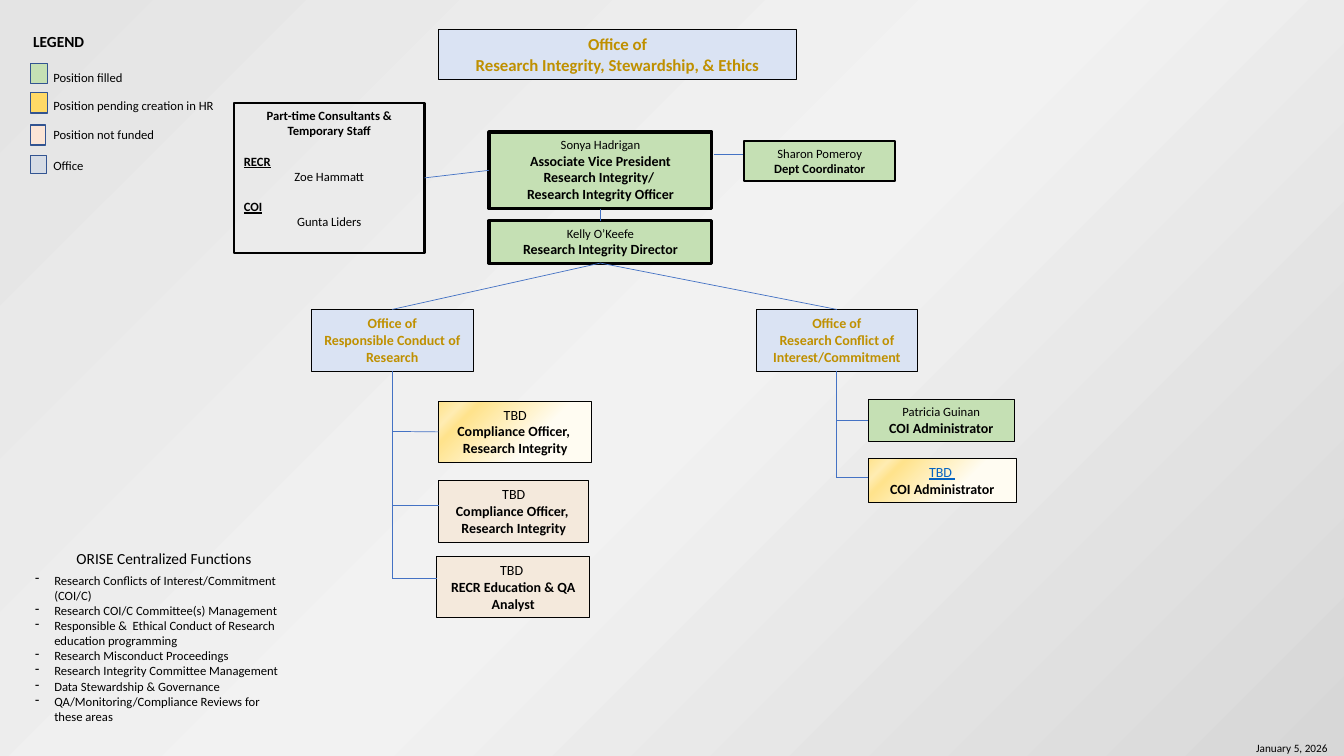
from pptx import Presentation
from pptx.dml.color import RGBColor
from pptx.enum.shapes import MSO_CONNECTOR as Connector, MSO_SHAPE as Shape
from pptx.enum.text import MSO_ANCHOR as Anchor, PP_ALIGN as Align
from pptx.oxml import parse_xml
from pptx.oxml.ns import nsdecls, qn
from pptx.util import Inches, Pt

BLACK = RGBColor(0x00, 0x00, 0x00)
GOLD = RGBColor(0xBF, 0x90, 0x00)
LINK_BLUE = RGBColor(0x05, 0x63, 0xC1)
LINE_BLUE = RGBColor(0x44, 0x72, 0xC4)
SWATCH_EDGE = RGBColor(0x32, 0x54, 0x91)
FILLED = RGBColor(0xC5, 0xE0, 0xB4)
PENDING = RGBColor(0xFF, 0xD9, 0x66)
NOT_FUNDED = RGBColor(0xFB, 0xE5, 0xD6)
OFFICE_KEY = RGBColor(0xD6, 0xDC, 0xE5)
OFFICE = RGBColor(0xDA, 0xE3, 0xF3)
UNFUNDED_POST = RGBColor(0xF4, 0xE9, 0xDC)
PENDING_STOPS = [(37, RGBColor(0xFF, 0xFC, 0xF2)), (80, RGBColor(0xFF, 0xE3, 0x8C)),
                 (88, RGBColor(0xFF, 0xEC, 0xB2)), (100, RGBColor(0xFF, 0xE3, 0x8C))]
BACKGROUND_STOPS = [(0, RGBColor(0xE4, 0xE4, 0xE4)), (51, RGBColor(0xF2, 0xF2, 0xF2)),
                    (100, RGBColor(0xD7, 0xD7, 0xD7))]
RADIAL = '<a:path {} path="circle"><a:fillToRect l="100000" t="100000"/></a:path>'
DIAGONAL = '<a:lin {} ang="2700000" scaled="0"/>'
FUNCTIONS = [
    "Research Conflicts of Interest/Commitment (COI/C)",
    "Research COI/C Committee(s) Management",
    "Responsible &  Ethical Conduct of Research education programming",
    "Research Misconduct Proceedings",
    "Research Integrity Committee Management",
    "Data Stewardship & Governance",
    "QA/Monitoring/Compliance Reviews for these areas",
]


def paint_gradient(fill, owner, stops, direction):
    """Fill the owner element with the given colour stops and direction."""
    fill.gradient()
    gradient = owner.find(".//" + qn("a:gradFill"))
    for child in list(gradient):
        gradient.remove(child)
    stop_xml = "".join(f'<a:gs pos="{position * 1000}"><a:srgbClr val="{color}"/></a:gs>'
                       for position, color in stops)
    gradient.append(parse_xml(f'<a:gsLst {nsdecls("a")}>{stop_xml}</a:gsLst>'))
    gradient.append(parse_xml(direction.format(nsdecls("a"))))


def format_paragraph(paragraph, text, size=9, bold=False, color=BLACK, underline=False):
    """Write one paragraph in the slide's font."""
    paragraph.text = text
    for run in paragraph.runs:
        run.font.name = "Calibri"
        run.font.size = Pt(size)
        run.font.bold = bold
        run.font.underline = underline
        run.font.color.rgb = color


def write_lines(shape, lines, alignment):
    """Write (text, format) lines into a shape and return its paragraphs."""
    frame = shape.text_frame
    frame.word_wrap = True
    frame.vertical_anchor = Anchor.TOP
    frame.text = "\n".join(text for text, _ in lines)
    for paragraph, (text, style) in zip(frame.paragraphs, lines):
        paragraph.alignment = alignment
        format_paragraph(paragraph, text, **style)
    return frame.paragraphs


def add_label(slide, box, text, **style):
    """Add a single-line text box."""
    label = slide.shapes.add_textbox(*map(Inches, box))
    write_lines(label, [(text, style)], Align.LEFT)


def add_rectangle(slide, box, fill, edge, width):
    """Add a rectangle with a plain, gradient or empty fill."""
    rectangle = slide.shapes.add_shape(Shape.RECTANGLE, *map(Inches, box))
    rectangle.shadow.inherit = False
    rectangle.line.color.rgb = edge
    rectangle.line.width = Pt(width)
    if fill is None:
        rectangle.fill.background()
    elif fill is PENDING_STOPS:
        paint_gradient(rectangle.fill, rectangle._element, fill, RADIAL)
    else:
        rectangle.fill.solid()
        rectangle.fill.fore_color.rgb = fill
    return rectangle


def add_post(slide, box, holder, titles, fill=FILLED, width=0.75,
             holder_style=None, title_size=10):
    """Add a staff box: holder on top, job title in bold below."""
    post = add_rectangle(slide, box, fill, BLACK, width)
    lines = [(holder, holder_style or {})]
    lines += [(title, {"size": title_size, "bold": True}) for title in titles]
    write_lines(post, lines, Align.CENTER)
    return post


def add_office(slide, box, name, size=10):
    """Add an office heading box."""
    office = add_rectangle(slide, box, OFFICE, BLACK, 0.25)
    style = {"size": size, "bold": True, "color": GOLD}
    write_lines(office, [("Office of", style), (name, style)], Align.CENTER)
    return office


def add_link(slide, start, end, begin=None, finish=None):
    """Draw a thin line, joined to any (shape, site) given for its ends."""
    link = slide.shapes.add_connector(Connector.STRAIGHT, *map(Inches, (*start, *end)))
    link.line.color.rgb = LINE_BLUE
    link.line.width = Pt(0.5)
    link._element.spPr.append(parse_xml(f'<a:effectLst {nsdecls("a")}/>'))
    if begin:
        link.begin_connect(*begin)
    if finish:
        link.end_connect(*finish)


def add_legend(slide, left, top):
    """Add the colour key."""
    add_label(slide, (left, top, 1.38, 0.29), "LEGEND", size=11, bold=True)
    rows = [("Position filled", FILLED, 0.36, 0.37, 0.17, 0.2),
            ("Position pending creation in HR", PENDING, 0.65, 0.65, 0.17, 0.2),
            ("Position not funded", NOT_FUNDED, 0.97, 0.94, 0.15, 0.2),
            ("Office", OFFICE_KEY, 1.27, 1.25, 0.16, 0.18)]
    for text, color, swatch_top, label_top, width, height in rows:
        add_rectangle(slide, (left + 0.07, top + swatch_top, width, height),
                      color, SWATCH_EDGE, 1)
        add_label(slide, (left + 0.2, top + label_top, 1.89, 0.25), text)


def add_consultants(slide, box):
    """Add the panel of part-time staff."""
    panel = add_rectangle(slide, box, None, BLACK, 1.5)
    heading = {"bold": True, "underline": True}
    lines = [("Part-time Consultants & Temporary Staff", {"bold": True}),
             ("RECR", heading), ("Zoe Hammatt", {}), ("COI", heading), ("Gunta Liders", {})]
    for paragraph, (_, style) in zip(write_lines(panel, lines, Align.CENTER), lines):
        if style is heading:
            paragraph.alignment = Align.LEFT
            paragraph.space_before = Pt(11)
    return panel


def add_leadership(slide, left, top):
    """Add the leading posts and the consultants beside them."""
    vice_president = add_post(
        slide, (left, top, 2.21, 0.76), "Sonya Hadrigan",
        ["Associate Vice President", "Research Integrity/ ", "Research Integrity Officer"],
        width=2.25)
    director = add_post(slide, (left, top + 0.88, 2.21, 0.42), "Kelly O’Keefe",
                        ["Research Integrity Director"], width=2.25)
    add_post(slide, (left + 2.53, top + 0.09, 1.5, 0.4), "Sharon Pomeroy",
             ["Dept Coordinator"], width=1.5, title_size=9)
    panel = add_consultants(slide, (left - 2.53, top - 0.29, 1.89, 1.49))
    origin = (left, top)
    add_link(slide, (left + 2.23, top + 0.22), (left + 2.52, top + 0.22))
    add_link(slide, origin, origin, (panel, 3), (vice_president, 1))
    add_link(slide, origin, origin, (vice_president, 2), (director, 0))
    return director


def add_branch(slide, director, box, name, posts):
    """Add an office under the director with its staff hanging from a trunk."""
    left, top, width, height = box
    office = add_office(slide, box, name)
    add_link(slide, (left, top), (left, top), (director, 2), (office, 0))
    trunk = left + width / 2
    for (x, y, w, h), joint, holder, titles, fill, style in posts:
        post_box = (left + x, top + y, w, h)
        post = add_post(slide, post_box, holder, titles, fill, holder_style=style)
        centred = abs(joint - y - h / 2) < 0.01
        add_link(slide, (trunk, top + joint), (left + x, top + joint),
                 finish=(post, 1) if centred else None)
    add_link(slide, (trunk, top + height), (trunk, top + posts[-1][1]), (office, 2))


def add_functions(slide, left, top):
    """Add the dashed list of centralized functions."""
    add_label(slide, (left + 0.41, top, 1.95, 0.29), "ORISE Centralized Functions", size=11)
    functions = slide.shapes.add_textbox(*map(Inches, (left, top + 0.23, 2.66, 1.87)))
    for paragraph in write_lines(functions, [(text, {}) for text in FUNCTIONS], Align.LEFT):
        properties = paragraph._p.get_or_add_pPr()
        properties.set("marL", str(Inches(0.19)))
        properties.set("indent", str(-Inches(0.19)))
        properties.append(parse_xml(f'<a:buChar {nsdecls("a")} char="-"/>'))


def main():
    """Build the organization chart."""
    presentation = Presentation()
    presentation.slide_width, presentation.slide_height = Inches(13.33), Inches(7.5)
    slide = presentation.slides.add_slide(presentation.slide_layouts[6])
    paint_gradient(slide.background.fill, slide._element, BACKGROUND_STOPS, DIAGONAL)
    add_office(slide, (4.35, 0.29, 3.55, 0.5), "Research Integrity, Stewardship, & Ethics", 12)
    add_legend(slide, 0.23, 0.27)
    director = add_leadership(slide, 4.85, 1.31)
    plain = {"size": 10}
    linked = {"size": 10, "color": LINK_BLUE, "underline": True}
    officer = ["Compliance Officer, ", "Research Integrity"]
    add_branch(slide, director, (3.09, 3.07, 1.6, 0.61), "Responsible Conduct of Research", [
        ((1.26, 0.91, 1.52, 0.61), 1.21, "TBD", officer, PENDING_STOPS, plain),
        ((1.26, 1.7, 1.49, 0.61), 1.94, "TBD", officer, UNFUNDED_POST, plain),
        ((1.24, 2.45, 1.52, 0.61), 2.67, "TBD ", ["RECR Education & QA Analyst"],
         UNFUNDED_POST, plain)])
    add_branch(slide, director, (7.5, 3.07, 1.6, 0.61),
               "Research Conflict of Interest/Commitment", [
        ((1.11, 0.89, 1.45, 0.42), 1.1, "Patricia Guinan", ["COI Administrator"], FILLED, None),
        ((1.11, 1.48, 1.47, 0.44), 1.67, "TBD ", ["COI Administrator"], PENDING_STOPS, linked)])
    add_functions(slide, 0.25, 5.4)
    add_label(slide, (12.36, 7.31, 0.97, 0.19), "January 5, 2026", size=8)
    presentation.save("out.pptx")


if __name__ == "__main__":
    main()
